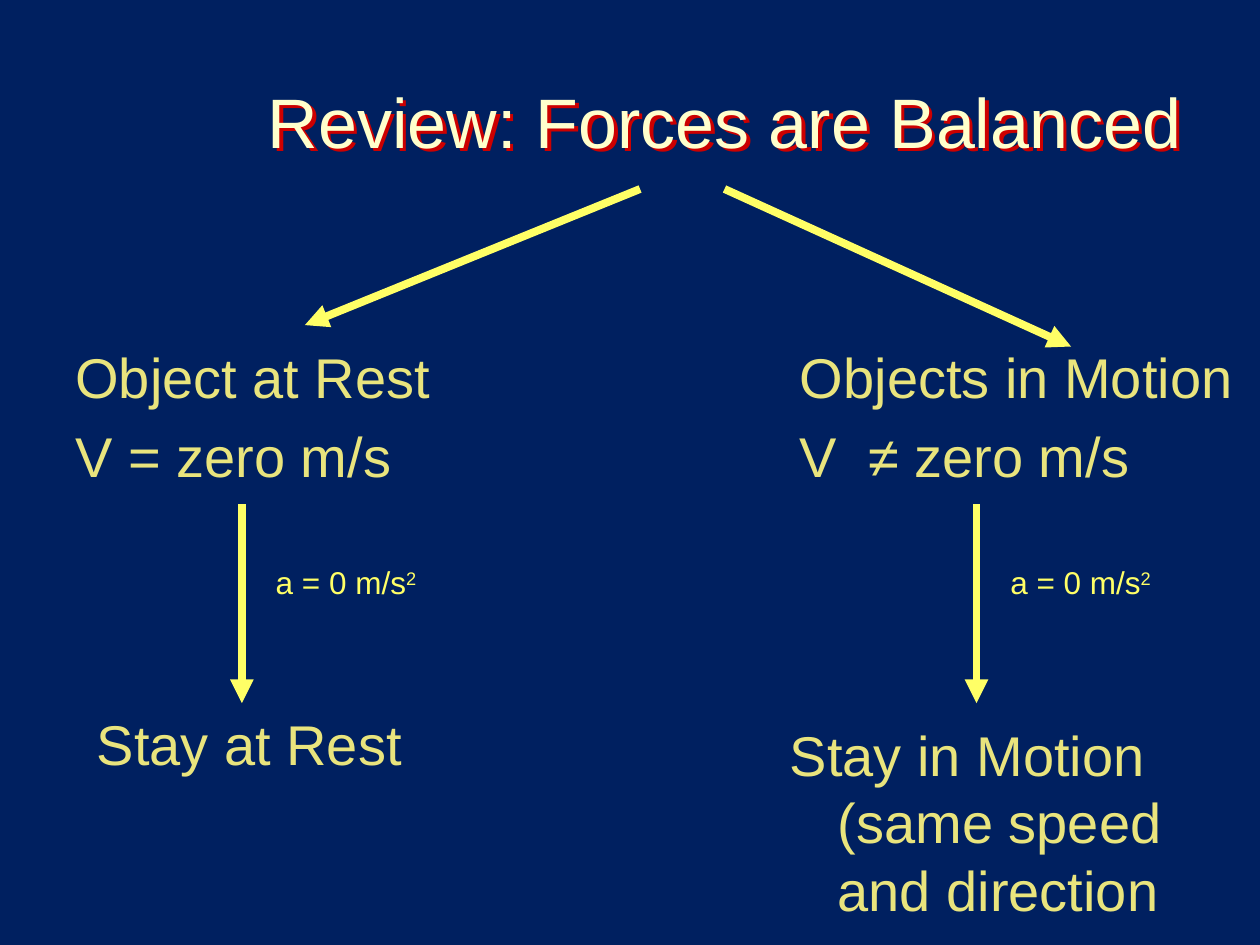
"""Builds a review slide that splits balanced forces into rest and motion."""
from typing import NamedTuple

from lxml.etree import SubElement
from pptx import Presentation
from pptx.dml.color import RGBColor
from pptx.enum.shapes import MSO_CONNECTOR
from pptx.enum.text import MSO_ANCHOR, MSO_AUTO_SIZE, PP_ALIGN
from pptx.oxml.ns import qn
from pptx.util import Inches, Pt

NAVY = RGBColor(0x00, 0x20, 0x60)
CREAM = RGBColor(0xFF, 0xFF, 0xCC)
RED = RGBColor(0xCC, 0x00, 0x00)
KHAKI = RGBColor(0xE9, 0xE4, 0x7D)
YELLOW = RGBColor(0xFF, 0xFF, 0x66)
FONT = "Arial"


class Statement(NamedTuple):
    left: float
    top: float
    width: float
    lines: tuple[str, ...]


class Arrow(NamedTuple):
    x1: float
    y1: float
    x2: float
    y2: float


STATEMENTS = (
    Statement(0.5, 2.67, 3.25, ("Object at Rest", "V = zero m/s")),
    Statement(6.25, 2.67, 3.75, ("Objects in Motion", "V  ≠ zero m/s")),
    Statement(0.67, 5.58, 3.25, ("Stay at Rest",)),
    Statement(6.17, 5.67, 3.25, ("Stay in Motion (same speed and direction",)),
)
BRANCHES = (Arrow(5.08, 1.5, 2.42, 2.58), Arrow(5.75, 1.5, 8.5, 2.75))
OUTCOME_XS = (1.92, 7.75)


def add_run(p, text: str, size: int, color: RGBColor):
    r = p.add_run()
    r.text = text
    r.font.name = FONT
    r.font.size = Pt(size)
    r.font.color.rgb = color
    return r


def add_box(s, left: float, top: float, width: float, height: float):
    sp = s.shapes.add_textbox(Inches(left), Inches(top), Inches(width), Inches(height))
    sp.text_frame.word_wrap = True
    return sp.text_frame


def add_title(s, text: str) -> None:
    sp = s.shapes.title
    sp.left, sp.top, sp.width, sp.height = Inches(2), Inches(0.33), Inches(7.5), Inches(1.25)
    tf = sp.text_frame
    tf.auto_size = MSO_AUTO_SIZE.NONE
    tf.vertical_anchor = MSO_ANCHOR.MIDDLE
    p = tf.paragraphs[0]
    p.alignment = PP_ALIGN.CENTER
    add_run(p, text, 40, CREAM)
    effects = SubElement(sp.element.spPr, qn("a:effectLst"))
    shadow = SubElement(effects, qn("a:outerShdw"), dist=str(Inches(0.04)), dir="2700000", algn="ctr", rotWithShape="0")
    SubElement(shadow, qn("a:srgbClr"), val=str(RED))


def add_statement(s, item: Statement) -> None:
    tf = add_box(s, item.left, item.top, item.width, 1.83)
    for i, line in enumerate(item.lines):
        p = tf.add_paragraph() if i else tf.paragraphs[0]
        p.space_before = Pt(6.4 if i else 0)
        pPr = p._p.get_or_add_pPr()
        pPr.set("marL", str(Inches(0.38)))
        pPr.set("indent", str(Inches(-0.38)))
        add_run(p, line, 32, KHAKI)


def add_arrow(s, arrow: Arrow) -> None:
    sp = s.shapes.add_connector(MSO_CONNECTOR.STRAIGHT, *(Inches(v) for v in arrow))
    sp.line.color.rgb = YELLOW
    sp.line.width = Pt(4.5)
    SubElement(sp.line._get_or_add_ln(), qn("a:tailEnd"), type="triangle")
    SubElement(sp.element.spPr, qn("a:effectLst"))


def add_acceleration(s, left: float) -> None:
    p = add_box(s, left, 4.42, 1.83, 0.4).paragraphs[0]
    add_run(p, "a = 0 m/s", 18, YELLOW)
    r = add_run(p, "2", 18, YELLOW)
    r.font._element.set("baseline", "30000")


def main() -> None:
    prs = Presentation()
    prs.slide_width, prs.slide_height = Inches(10), Inches(7.5)
    s = prs.slides.add_slide(prs.slide_layouts[5])
    s.background.fill.solid()
    s.background.fill.fore_color.rgb = NAVY
    add_title(s, "Review: Forces are Balanced")
    for item in STATEMENTS:
        add_statement(s, item)
    for arrow in BRANCHES:
        add_arrow(s, arrow)
    for x in OUTCOME_XS:
        add_arrow(s, Arrow(x, 4, x, 5.58))
        add_acceleration(s, x + 0.17)
    prs.save("out.pptx")


if __name__ == "__main__":
    main()
